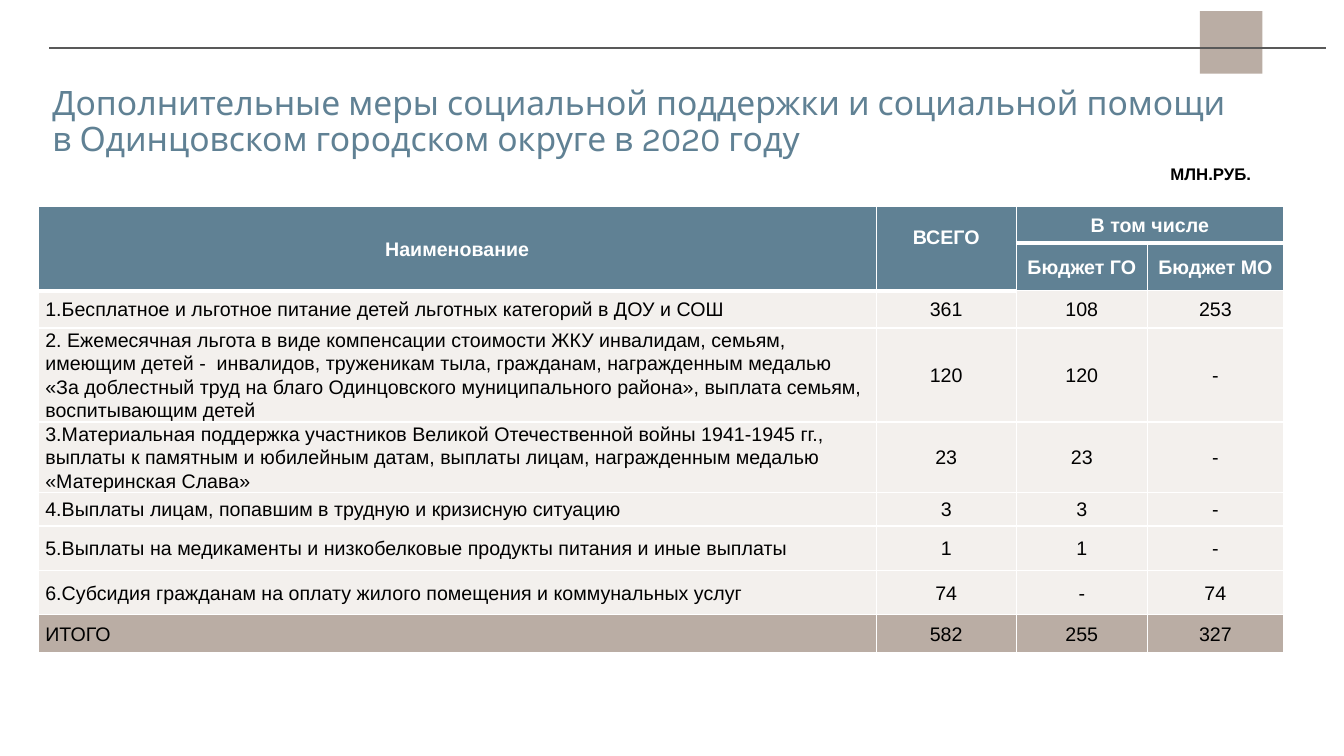
from dataclasses import dataclass

from lxml import etree
from pptx import Presentation
from pptx.dml.color import RGBColor
from pptx.enum.shapes import MSO_CONNECTOR, MSO_SHAPE
from pptx.enum.text import MSO_ANCHOR, MSO_AUTO_SIZE, PP_ALIGN
from pptx.oxml.ns import qn
from pptx.slide import Slide
from pptx.table import Table, _Cell
from pptx.text.text import _Paragraph
from pptx.util import Inches, Pt

MIDDLE = MSO_ANCHOR.MIDDLE
LEFT, CENTER = PP_ALIGN.LEFT, PP_ALIGN.CENTER
NO_AUTOFIT = MSO_AUTO_SIZE.NONE
RECTANGLE = MSO_SHAPE.RECTANGLE
STRAIGHT = MSO_CONNECTOR.STRAIGHT


@dataclass(frozen=True)
class Theme:
    blue: str = "608194"
    beige: str = "BAADA4"
    pale: str = "F3F0ED"
    rule: str = "595959"
    white: str = "FFFFFF"
    black: str = "000000"
    title_font: str = "Karla"
    body_font: str = "Arial"
    title_size: int = 24
    table_size: int = 14
    unit_size: int = 12
    thin_border: int = 1
    thick_border: int = 3


@dataclass(frozen=True)
class HeaderCell:
    row: int
    column: int
    text: str
    row_span: int = 1
    column_span: int = 1
    bottom_margin: float = 0


@dataclass(frozen=True)
class SupportMeasure:
    name: str
    total: str
    district_budget: str
    region_budget: str


THEME = Theme()
TITLE = ("Дополнительные меры социальной поддержки и социальной помощи "
         "в Одинцовском городском округе в 2020 году")
COLUMN_WIDTHS = (8.31, 1.39, 1.3, 1.35)
ROW_HEIGHTS = (0.36, 0.45, 0.37, 0.81, 0.53, 0.33, 0.44, 0.44, 0.38)
HEADER_ROWS = 2
HEADERS = (
    HeaderCell(0, 0, "Наименование", row_span=2),
    HeaderCell(0, 1, "ВСЕГО", row_span=2, bottom_margin=0.24),
    HeaderCell(0, 2, "В том числе", column_span=2),
    HeaderCell(1, 2, "Бюджет ГО"),
    HeaderCell(1, 3, "Бюджет МО"),
)
MEASURES = (
    SupportMeasure("1.Бесплатное и льготное питание детей льготных категорий в ДОУ и СОШ",
                   "361", "108", "253"),
    SupportMeasure("2. Ежемесячная льгота в виде компенсации стоимости ЖКУ инвалидам, семьям, "
                   "имеющим детей -  инвалидов, труженикам тыла, гражданам, награжденным "
                   "медалью «За доблестный труд на благо Одинцовского муниципального района», "
                   "выплата семьям, воспитывающим детей", "120", "120", "-"),
    SupportMeasure("3.Материальная поддержка участников Великой Отечественной войны "
                   "1941-1945 гг., выплаты к памятным и юбилейным датам, выплаты лицам, "
                   "награжденным медалью «Материнская Слава»", "23", "23", "-"),
    SupportMeasure("4.Выплаты лицам, попавшим в трудную и кризисную ситуацию", "3", "3", "-"),
    SupportMeasure("5.Выплаты на медикаменты и низкобелковые продукты питания и иные выплаты",
                   "1", "1", "-"),
    SupportMeasure("6.Субсидия гражданам на оплату жилого помещения и коммунальных услуг",
                   "74", "-", "74"),
    SupportMeasure("ИТОГО", "582", "255", "327"),
)


def rgb(color: str) -> RGBColor:
    return RGBColor.from_string(color)


def format_text(paragraph: _Paragraph, font: str, size: int, color: str,
                bold: bool = False) -> None:
    for run in paragraph.runs:
        run.font.name = font
        run.font.size = Pt(size)
        run.font.bold = bold
        run.font.color.rgb = rgb(color)


def add_title(slide: Slide) -> None:
    title = slide.shapes.title
    title.left, title.top = Inches(0.42), Inches(0.95)
    title.width, title.height = Inches(11.92), Inches(0.53)
    frame = title.text_frame
    frame.text = TITLE
    frame.word_wrap = True
    frame.auto_size = NO_AUTOFIT
    frame.vertical_anchor = MIDDLE
    paragraph = frame.paragraphs[0]
    paragraph.alignment = LEFT
    paragraph.line_spacing = 0.9
    format_text(paragraph, THEME.title_font, THEME.title_size, THEME.blue)


def add_top_decoration(slide: Slide) -> None:
    square = slide.shapes.add_shape(RECTANGLE, Inches(11.9), Inches(0.11),
                                    Inches(0.62), Inches(0.62))
    square.shadow.inherit = False
    square.fill.solid()
    square.fill.fore_color.rgb = rgb(THEME.beige)
    square.line.fill.background()
    rule = slide.shapes.add_connector(STRAIGHT, Inches(0.49), Inches(0.48),
                                      Inches(13.15), Inches(0.48))
    rule.line.color.rgb = rgb(THEME.rule)
    rule.line.width = Pt(1.5)
    etree.SubElement(rule._element.spPr, qn("a:effectLst"))


def add_unit_label(slide: Slide) -> None:
    label = slide.shapes.add_textbox(Inches(11.51), Inches(1.58), Inches(1.01), Inches(0.3))
    label.text_frame.text = "МЛН.РУБ."
    label.text_frame.word_wrap = False
    format_text(label.text_frame.paragraphs[0], THEME.body_font, THEME.unit_size,
                THEME.black, bold=True)


def fill_cell(cell: _Cell, text: str, fill: str, color: str, alignment: PP_ALIGN,
              bold: bool = False, bottom_margin: float = 0) -> None:
    cell.text_frame.text = text
    cell.vertical_anchor = MIDDLE
    cell.margin_left = cell.margin_right = Inches(0.07)
    cell.margin_top, cell.margin_bottom = Inches(0), Inches(bottom_margin)
    cell.fill.solid()
    cell.fill.fore_color.rgb = rgb(fill)
    paragraph = cell.text_frame.paragraphs[0]
    paragraph.alignment = alignment
    paragraph.line_spacing = 1.07
    format_text(paragraph, THEME.body_font, THEME.table_size, color, bold)


def set_borders(cell: _Cell, top: int, bottom: int) -> None:
    properties = cell._tc.get_or_add_tcPr()
    widths = {"lnL": THEME.thin_border, "lnR": THEME.thin_border, "lnT": top, "lnB": bottom}
    for position, (tag, width) in enumerate(widths.items()):
        border = etree.Element(qn(f"a:{tag}"), w=str(Pt(width)))
        solid_fill = etree.SubElement(border, qn("a:solidFill"))
        etree.SubElement(solid_fill, qn("a:srgbClr"), val=THEME.white)
        properties.insert(position, border)


def draw_borders(table: Table) -> None:
    """Thicken the line under each header cell that starts in the first row."""
    for row in range(len(ROW_HEIGHTS)):
        for column in range(len(COLUMN_WIDTHS)):
            thick_line = HEADER_ROWS if column < 2 else 1
            top = THEME.thick_border if row == thick_line else THEME.thin_border
            ends_header = row + 1 == thick_line or (row == 0 and column < 2)
            bottom = THEME.thick_border if ends_header else THEME.thin_border
            set_borders(table.cell(row, column), top, bottom)


def add_support_table(slide: Slide) -> None:
    table = slide.shapes.add_table(len(ROW_HEIGHTS), len(COLUMN_WIDTHS), Inches(0.38),
                                   Inches(2.05), Inches(sum(COLUMN_WIDTHS)),
                                   Inches(sum(ROW_HEIGHTS))).table
    for column, width in zip(table.columns, COLUMN_WIDTHS):
        column.width = Inches(width)
    for row, height in zip(table.rows, ROW_HEIGHTS):
        row.height = Inches(height)
    for header in HEADERS:
        cell = table.cell(header.row, header.column)
        if header.row_span > 1 or header.column_span > 1:
            cell.merge(table.cell(header.row + header.row_span - 1,
                                  header.column + header.column_span - 1))
        fill_cell(cell, header.text, THEME.blue, THEME.white, CENTER, True,
                  header.bottom_margin)
    for row, measure in enumerate(MEASURES, start=HEADER_ROWS):
        fill = THEME.beige if measure is MEASURES[-1] else THEME.pale
        values = (measure.name, measure.total, measure.district_budget, measure.region_budget)
        for column, value in enumerate(values):
            alignment = CENTER if column else LEFT
            fill_cell(table.cell(row, column), value, fill, THEME.black, alignment)
    draw_borders(table)


def main() -> None:
    presentation = Presentation()
    presentation.slide_width, presentation.slide_height = Inches(13.33), Inches(7.5)
    slide = presentation.slides.add_slide(presentation.slide_layouts[5])
    add_top_decoration(slide)
    add_title(slide)
    add_support_table(slide)
    add_unit_label(slide)
    presentation.save("out.pptx")


if __name__ == "__main__":
    main()
